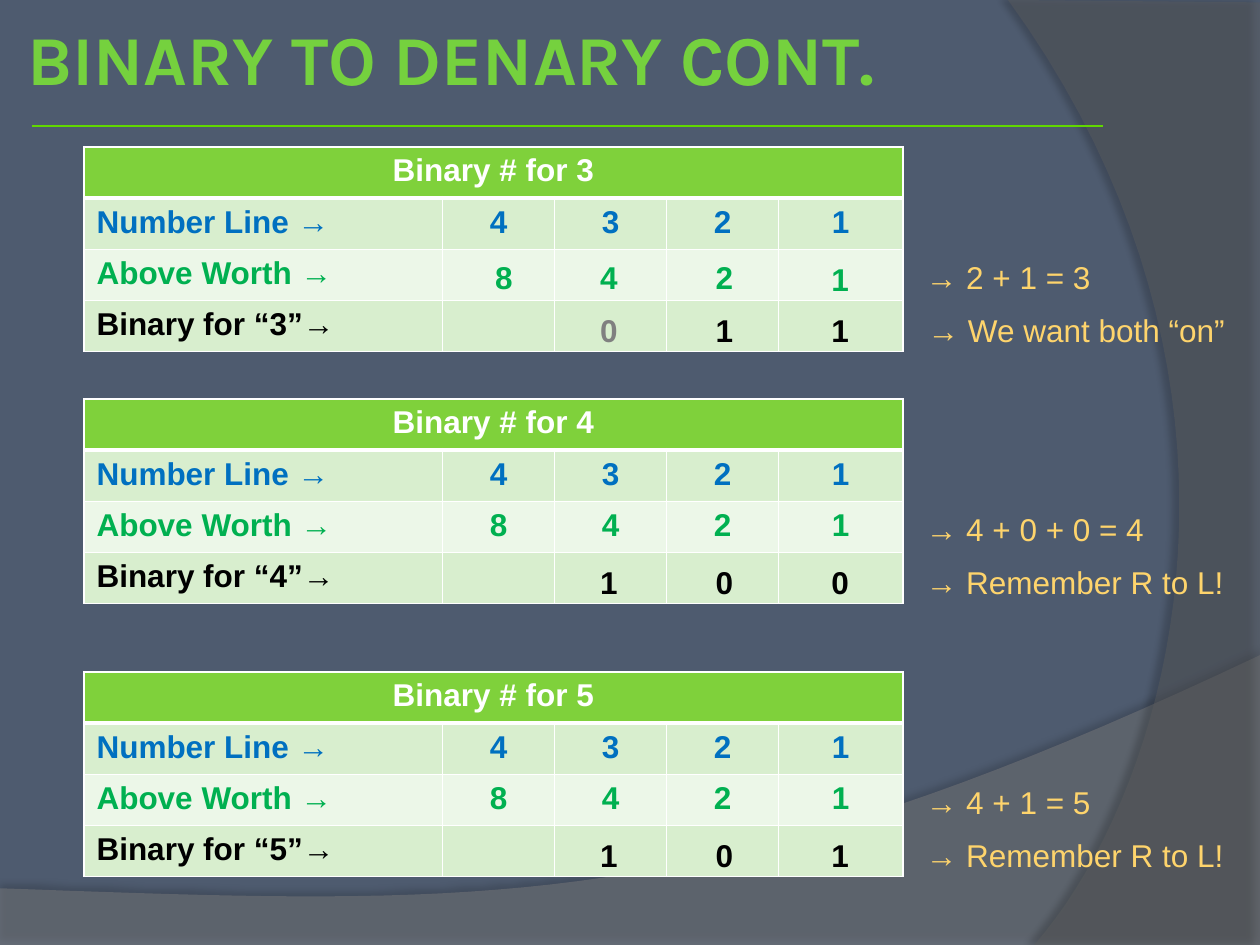
from lxml.etree import SubElement
from pptx import Presentation
from pptx.dml.color import RGBColor as RGB
from pptx.enum.shapes import MSO_CONNECTOR as CONNECTOR
from pptx.enum.text import MSO_ANCHOR as ANCHOR, MSO_AUTO_SIZE as AUTO_SIZE, PP_ALIGN as ALIGN
from pptx.oxml import parse_xml
from pptx.oxml.ns import nsdecls, qn
from pptx.util import Pt

COLORS = {
    "background": "4E5B6F", "wave": "7F7F7F", "arc": "5E5E5E", "rule": "61D700",
    "title": "75D13E", "header": "7FD13B", "dark band": "D8EECE", "light band": "ECF7E8",
    "white": "FFFFFF", "number": "0070C0", "worth": "00B050", "binary": "000000",
    "off": "808080", "note": "FED46C",
}
RGBS = {name: RGB.from_string(value) for name, value in COLORS.items()}


def write(frame, text, color, align=ALIGN.LEFT, bold=True, size=18, font="Arial"):
    paragraph = frame.paragraphs[0]
    paragraph.alignment = align
    run = paragraph.add_run()
    run.text = text
    run.font.size = Pt(size)
    run.font.name = font
    run.font.bold = bold
    run.font.color.rgb = RGBS[color]


def add_label(left, top, width, text, color, align, bold):
    frame = slide.shapes.add_textbox(Pt(left), Pt(top), Pt(width), Pt(29)).text_frame
    frame.word_wrap = True
    frame.auto_size = AUTO_SIZE.SHAPE_TO_FIT_TEXT
    write(frame, text, color, align, bold)


prs = Presentation()
prs.slide_width, prs.slide_height = Pt(720), Pt(540)
slide = prs.slides.add_slide(prs.slide_layouts[5])
slide.background.fill.solid()
slide.background.fill.fore_color.rgb = RGBS["background"]

# color, opacity, curve control points, closing corners, shadow opacity, distance, angle
backdrops = [
    ("wave", 45, [(720, 374.4), (402.5, 525), (281.5, 517.7), (0, 507.6)],
     [(0, 540), (720, 540)], 35, 3.5, 270),
    ("arc", 40, [(591, 540), (673, 445.7), (733, 216), (576, 0)],
     [(720, 1.4), (720, 540)], 45, 4, 180),
]
STEPS = 40
for color, opacity, controls, corners, shade, distance, angle in backdrops:
    curve = []
    for step in range(STEPS + 1):
        t = step / STEPS
        weights = [(1 - t) ** 3, 3 * t * (1 - t) ** 2, 3 * t * t * (1 - t), t ** 3]
        curve.append([sum(w * point[axis] for w, point in zip(weights, controls))
                      for axis in (0, 1)])
    outline = [(Pt(x), Pt(y)) for x, y in curve + corners]
    builder = slide.shapes.build_freeform(*outline[0])
    builder.add_line_segments(outline[1:])
    backdrop = builder.convert_to_shape()
    backdrop.line.fill.background()
    backdrop.fill.solid()
    backdrop.fill.fore_color.rgb = RGBS[color]
    properties = backdrop.fill._xPr
    SubElement(properties.find(qn("a:solidFill"))[0], qn("a:alpha"), val=str(opacity * 1000))
    backdrop.shadow.inherit = False
    properties.find(qn("a:effectLst")).append(parse_xml(
        f'<a:outerShdw {nsdecls("a")} blurRad="{Pt(4)}" dist="{Pt(distance)}" '
        f'dir="{angle * 60000}" rotWithShape="0"><a:srgbClr val="000000">'
        f'<a:alpha val="{shade * 1000}"/></a:srgbClr></a:outerShdw>'))

rule = slide.shapes.add_connector(CONNECTOR.STRAIGHT, Pt(18), Pt(72), Pt(630), Pt(72))
rule.line.color.rgb = RGBS["rule"]
rule.line.width = Pt(0.75)
SubElement(rule._element.spPr, qn("a:effectLst"))

title = slide.shapes.title
title.left, title.top, title.width, title.height = Pt(12), Pt(-12), Pt(642), Pt(90)
heading = title.text_frame
heading.vertical_anchor = ANCHOR.MIDDLE
heading.margin_left = heading.margin_right = Pt(3.6)
heading.margin_top = heading.margin_bottom = Pt(3.6)
write(heading, "BINARY TO DENARY CONT.", "title", size=40, font="Karla")

COLUMN_WIDTHS = [205, 64, 64, 64, 71]
ROW_HEIGHT = 29.25
DIGIT_LEFTS = [264, 324, 390, 456]
WORTHS = "8421"
BANDS = ["header", "dark band", "light band", "dark band"]

# number, table top, binary digits, sum, remark, remark left, remark width, remark alignment
examples = [
    ("3", 84, "011", "→ 2 + 1 = 3", "→ We want both “on”", 510, 210, ALIGN.CENTER),
    ("4", 228, "100", "→ 4 + 0 + 0 = 4", "→ Remember R to L!", 522, 198, ALIGN.LEFT),
    ("5", 384, "101", "→ 4 + 1 = 5", "→ Remember R to L!", 522, 198, ALIGN.LEFT),
]
for number, top, digits, total, remark, remark_left, remark_width, remark_align in examples:
    worths_float = number == "3"
    grid = slide.shapes.add_table(4, 5, Pt(48), Pt(top), Pt(468), Pt(4 * ROW_HEIGHT)).table
    for column, width in zip(grid.columns, COLUMN_WIDTHS):
        column.width = Pt(width)
    for index, band in enumerate(BANDS):
        grid.rows[index].height = Pt(ROW_HEIGHT)
        for cell in grid.rows[index].cells:
            for side in "LRTB":
                heavy = (index, side) in [(0, "B"), (1, "T")]
                cell._tc.get_or_add_tcPr().append(parse_xml(
                    f'<a:ln{side} {nsdecls("a")} w="{Pt(3 if heavy else 1)}"><a:solidFill>'
                    f'<a:srgbClr val="{COLORS["white"]}"/></a:solidFill></a:ln{side}>'))
            cell.fill.solid()
            cell.fill.fore_color.rgb = RGBS[band]
    grid.cell(0, 0).merge(grid.cell(0, 4))

    rows = [
        ("white", [f"Binary # for {number}"]),
        ("number", ["Number Line →", *"4321"]),
        ("worth", ["Above Worth →", *("" if worths_float else WORTHS)]),
        ("binary", [f"Binary for “{number}”→"]),
    ]
    for row, (color, texts) in enumerate(rows):
        for column, text in enumerate(texts):
            align = ALIGN.CENTER if row == 0 or column else ALIGN.LEFT
            write(grid.cell(row, column).text_frame, text, color, align)

    if worths_float:
        for left, worth in zip(DIGIT_LEFTS, WORTHS):
            drop = 61 if worth == "1" else 60
            add_label(left, top + drop, 48, worth, "worth", ALIGN.CENTER, True)
    for place, (left, digit) in enumerate(zip(DIGIT_LEFTS[1:], digits)):
        color = "off" if place == 0 and digit == "0" else "binary"
        add_label(left, top + 90, 48, digit, color, ALIGN.CENTER, True)
    add_label(522, top + 60, 168, total, "note", ALIGN.LEFT, False)
    add_label(remark_left, top + 90, remark_width, remark, "note", remark_align, False)

prs.save("out.pptx")
